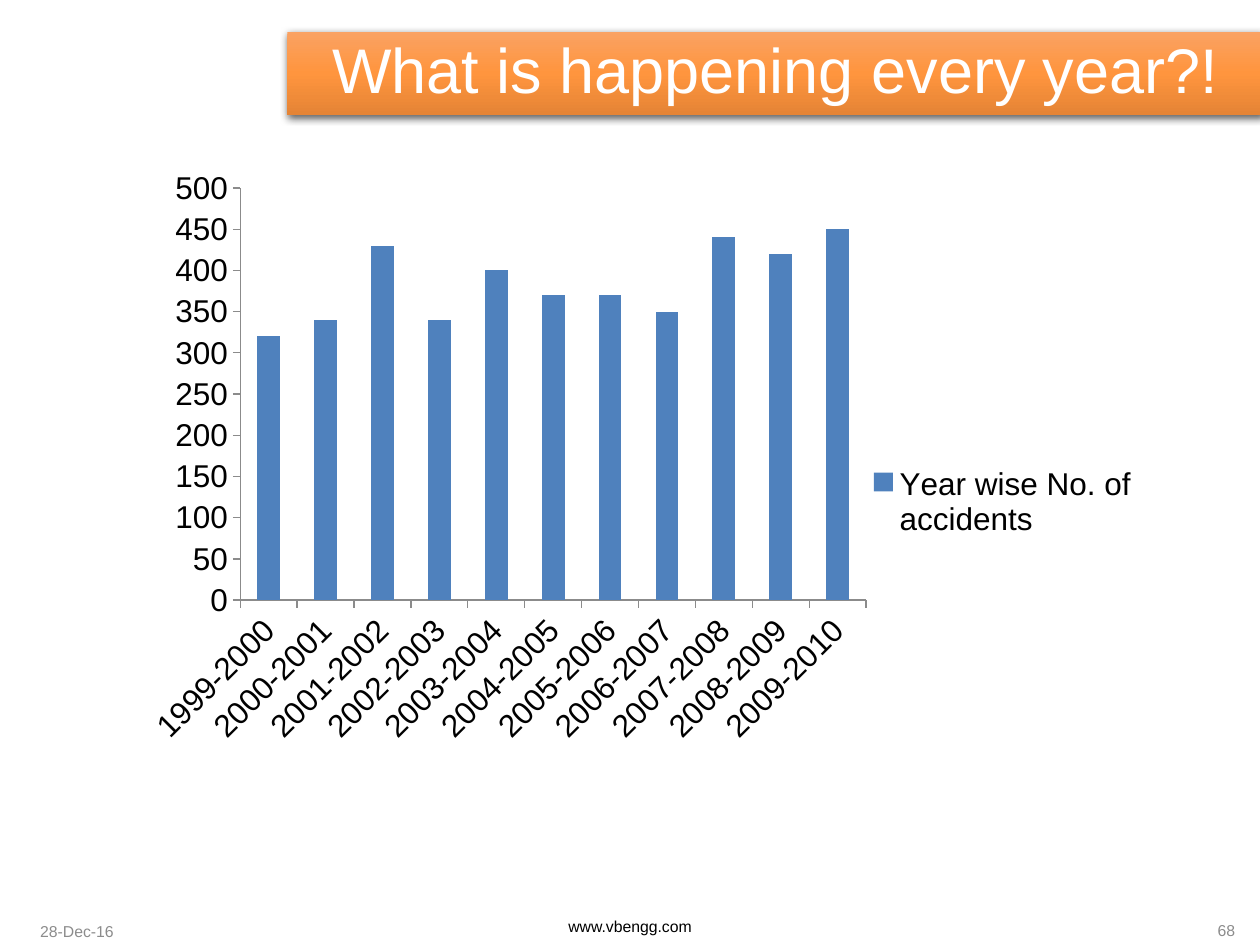
from lxml import etree
from pptx import Presentation
from pptx.chart.data import CategoryChartData
from pptx.dml.color import RGBColor
from pptx.enum.chart import XL_CHART_TYPE, XL_LEGEND_POSITION, XL_TICK_MARK
from pptx.enum.text import MSO_ANCHOR, PP_ALIGN
from pptx.oxml import parse_xml
from pptx.oxml.ns import nsdecls, qn
from pptx.util import Inches, Pt

FONT = "Arial"
COLORS = {"black": "000000", "white": "FFFFFF", "grey": "8C8C8C", "axis": "8B8B8B",
          "bar": "4F81BD", "top": "FAA263", "middle": "FF953E", "bottom": "E58435"}
FIRST_YEAR = 1999
ACCIDENTS = [320, 340, 430, 340, 400, 370, 370, 350, 440, 420, 450]


def color(name):
    return RGBColor.from_string(COLORS[name])


def format_font(font, size, color_name):
    font.name, font.size = FONT, Pt(size)
    font.color.rgb = color(color_name)


def write_text(shape, text, size=9, color_name="black", align=PP_ALIGN.LEFT, line_spacing=None):
    frame = shape.text_frame
    frame.word_wrap = True
    frame.vertical_anchor = MSO_ANCHOR.MIDDLE
    paragraph = frame.paragraphs[0]
    paragraph.alignment = align
    paragraph.line_spacing = line_spacing
    run = paragraph.add_run()
    run.text = text
    format_font(run.font, size, color_name)


def set_layout(parent, index, x, y, width, height, inner=False):
    """Give a chart part a manual layout, as fractions of the chart."""
    for old in parent.findall(qn("c:layout")):
        parent.remove(old)
    layout = parse_xml(f"<c:layout {nsdecls('c')}><c:manualLayout/></c:layout>")
    settings = [("layoutTarget", "inner")] if inner else []
    settings += [("xMode", "edge"), ("yMode", "edge"), ("x", x), ("y", y),
                 ("w", width), ("h", height)]
    for tag, value in settings:
        etree.SubElement(layout[0], qn(f"c:{tag}")).set("val", str(value))
    parent.insert(index, layout)


class SlideBuilder:
    def __init__(self, presentation):
        self.slide = presentation.slides.add_slide(presentation.slide_layouts[5])

    def title(self, text, left, top, width, height):
        shape = self.slide.shapes.title
        shape.left, shape.top = Inches(left), Inches(top)
        shape.width, shape.height = Inches(width), Inches(height)
        write_text(shape, text, size=36, color_name="white", align=PP_ALIGN.CENTER,
                   line_spacing=0.9)
        # Three-stop gradient and soft shadow below
        stops = "".join(
            f'<a:gs pos="{position}"><a:srgbClr val="{COLORS[name]}"/></a:gs>'
            for position, name in ((0, "top"), (50000, "middle"), (100000, "bottom")))
        properties = shape.element.spPr
        properties.append(parse_xml(
            f'<a:gradFill {nsdecls("a")} rotWithShape="1"><a:gsLst>{stops}</a:gsLst>'
            '<a:lin ang="5400000" scaled="0"/></a:gradFill>'))
        properties.append(parse_xml(
            f'<a:effectLst {nsdecls("a")}><a:outerShdw blurRad="{Pt(4.5)}" dist="{Pt(1.5)}" '
            f'dir="5400000" rotWithShape="0"><a:srgbClr val="{COLORS["black"]}">'
            '<a:alpha val="63000"/></a:srgbClr></a:outerShdw></a:effectLst>'))

    def text(self, text, left, top, width, height, **style):
        box = self.slide.shapes.add_textbox(
            Inches(left), Inches(top), Inches(width), Inches(height))
        write_text(box, text, **style)

    def column_chart(self, name, categories, values, left, top, width, height):
        data = CategoryChartData()
        data.categories = categories
        data.add_series(name, values)
        chart = self.slide.shapes.add_chart(
            XL_CHART_TYPE.COLUMN_CLUSTERED, Inches(left), Inches(top),
            Inches(width), Inches(height), data).chart
        chart.has_title = False
        format_font(chart.font, 18, "black")

        # Columns
        plot = chart.plots[0]
        plot.gap_width = 150
        plot.vary_by_categories = False
        fill = plot.series[0].format.fill
        fill.solid()
        fill.fore_color.rgb = color("bar")
        set_layout(chart.element.chart.plotArea, 0, 0.115, 0.03, 0.579, 0.644, inner=True)

        # Axes
        for axis in (chart.category_axis, chart.value_axis):
            axis.has_major_gridlines = False
            axis.major_tick_mark = XL_TICK_MARK.OUTSIDE
            axis.format.line.color.rgb = color("axis")
            axis.format.line.width = Pt(0.75)
            format_font(axis.tick_labels.font, 18, "black")
        value_axis = chart.value_axis
        value_axis.minimum_scale, value_axis.maximum_scale = 0, 500
        value_axis.major_unit = 50
        label_body = chart.category_axis._element.find(qn("c:txPr")).find(qn("a:bodyPr"))
        label_body.set("rot", str(-45 * 60000))

        # Legend
        chart.has_legend = True
        legend = chart.legend
        legend.position = XL_LEGEND_POSITION.RIGHT
        legend.include_in_layout = False
        format_font(legend.font, 18, "black")
        set_layout(legend._element, 1, 0.67, 0.44, 0.3, 0.16)


def main():
    presentation = Presentation()
    presentation.slide_width, presentation.slide_height = Inches(10), Inches(7.5)
    builder = SlideBuilder(presentation)

    years = range(FIRST_YEAR, FIRST_YEAR + len(ACCIDENTS))
    builder.column_chart("Year wise No. of accidents", [f"{year}-{year + 1}" for year in years],
                         ACCIDENTS, 0.92, 1.34, 8.58, 5.08)
    builder.title("What is happening every year?!", 2.28, 0.25, 7.75, 0.66)

    # Footer
    builder.text("28-Dec-16", 0.22, 7.19, 2.25, 0.4, color_name="grey")
    builder.text("www.vbengg.com", 3.31, 7.15, 3.38, 0.4, align=PP_ALIGN.CENTER)
    builder.text("68", 7.65, 7.19, 2.25, 0.38, color_name="grey", align=PP_ALIGN.RIGHT)

    presentation.save("out.pptx")


if __name__ == "__main__":
    main()
